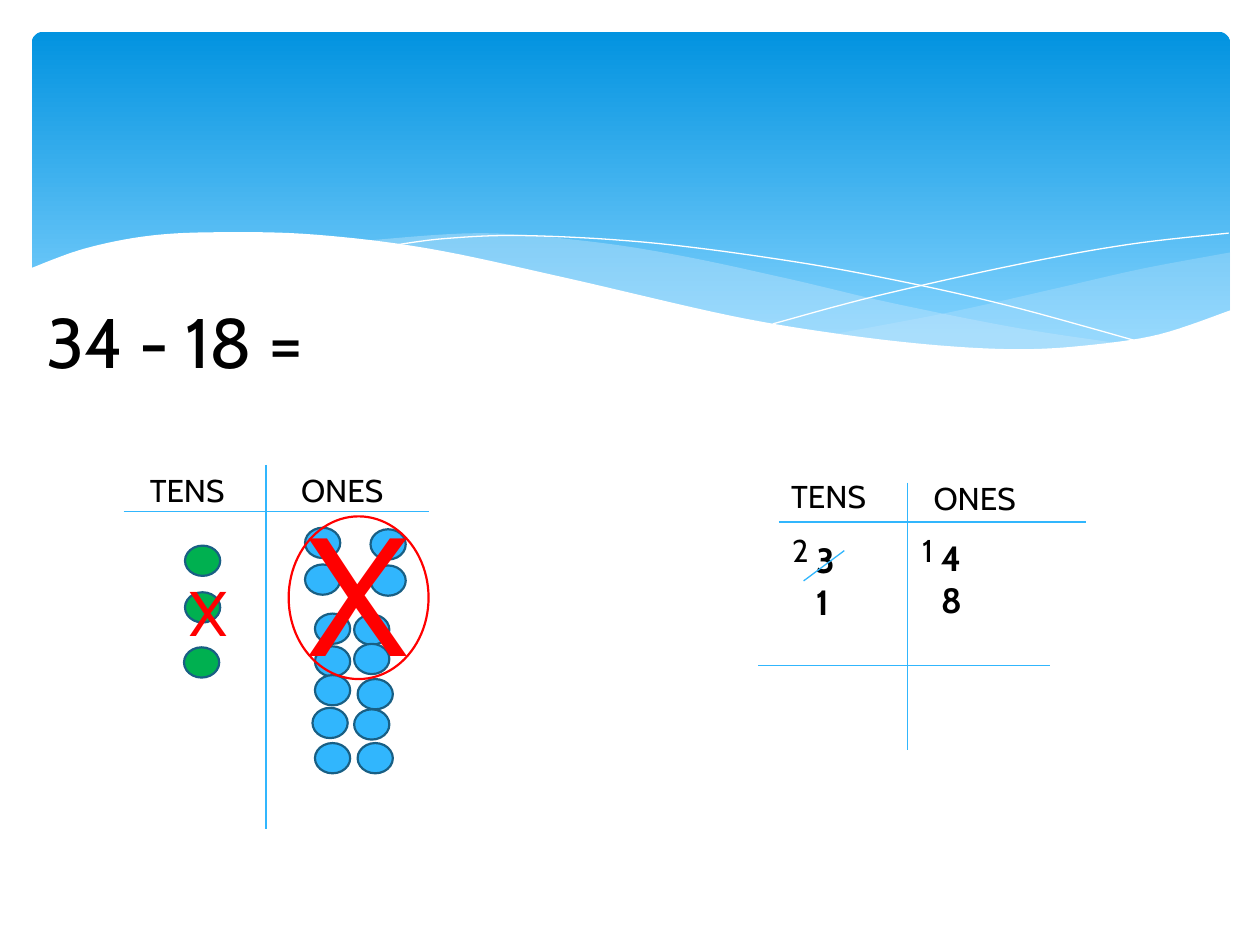
import lxml.etree
import pptx
import pptx.dml.color
import pptx.enum.shapes
import pptx.enum.text
import pptx.oxml.ns
import pptx.util

Cm = pptx.util.Cm
Pt = pptx.util.Pt
SHAPE = pptx.enum.shapes.MSO_SHAPE
COLORS = {
    "sky": "0293E0", "pale": "83D3FE", "mist": "C6E7FC", "white": "FFFFFF",
    "blue": "31B6FD", "navy": "195F84", "green": "00B050", "red": "FF0000", "black": "000000",
}
FONT = "Cabin"
COUNTER = (0.71, 0.61)

RIGHT_WAVE = (
    [(24.16, 4.45), (22.38, 4.78), (20.5, 5.21), (18.49, 5.66), (16.15, 6.1)],
    [(16.15, 6.1), (17.63, 6.27), (19.76, 6.43), (21.51, 6.32), (22.94, 6.05), (24.16, 5.64)],
)
MIDDLE_WAVE = (
    [(22.05, 6.3), (19.86, 5.97), (17.3, 5.46), (15.34, 5), (13.11, 4.52), (11.18, 4.22),
     (9.02, 4.06), (6.63, 4.22)],
    [(6.63, 4.22), (8.56, 4.52), (10.77, 5), (13.74, 5.66), (16.26, 6.12), (18.69, 6.4),
     (20.4, 6.43), (22.05, 6.3)],
)
FALLING_LINE = [(7.21, 4.32), (8.33, 4.17), (9.93, 4.11), (12.32, 4.24), (14.81, 4.55),
                (17.02, 4.93), (19.56, 5.49), (22.4, 6.27)]
RISING_LINE = [(14.94, 5.89), (17.02, 5.33), (19.84, 4.7), (22.1, 4.29), (24.13, 4.06)]
FRONT_WAVE = [(24.18, 5.61), (22.73, 6.1), (21.29, 6.32), (19.91, 6.4), (18.26, 6.32),
              (16.33, 6.1), (14.07, 5.72), (10.72, 4.95), (8, 4.37), (5.72, 4.09),
              (3.86, 4.04), (2.39, 4.11), (1.07, 4.37), (-0.05, 4.78)]

FOUR_ONES = [(3.66, 1.27), (3.66, 2.01), (4.98, 1.3), (4.98, 2.03)]
TEN_ONES = [(3.81, 4.9), (3.86, 3.66), (3.86, 4.24), (3.86, 3), (4.65, 3.02),
            (4.72, 4.32), (4.65, 3.61), (4.65, 4.93), (3.86, 5.61), (4.72, 5.61)]
THREE_TENS = [(1.24, 1.63), (1.24, 2.57), (1.22, 3.68)]


def color(name):
    """Return the named colour."""
    return pptx.dml.color.RGBColor.from_string(COLORS[name])


def spline(points, steps=8):
    """Return a smooth run of points through the given ones."""
    padded = [points[0], *points, points[-1]]
    curve = [points[0]]
    for a, b, c, d in zip(padded, padded[1:], padded[2:], padded[3:]):
        for step in range(1, steps + 1):
            t = step / steps
            curve.append(tuple(
                (2 * q + (r - p) * t + (2 * p - 5 * q + 4 * r - s) * t ** 2
                 + (3 * q - p - 3 * r + s) * t ** 3) / 2
                for p, q, r, s in zip(a, b, c, d)))
    return curve


def add_outline(slide, box, points, fill=None, opacity=100):
    """Draw a filled area, or a white hairline when there is no fill."""
    placed = [(Cm(box[0] + x), Cm(box[1] + y)) for x, y in points]
    builder = slide.shapes.build_freeform(*placed[0])
    builder.add_line_segments(placed[1:], close=fill is not None)
    shape = builder.convert_to_shape()
    shape.shadow.inherit = False
    if fill is None:
        shape.fill.background()
        shape.line.color.rgb = color("white")
        shape.line.width = Pt(0)
        return
    shape.line.fill.background()
    shape.fill.solid()
    shape.fill.fore_color.rgb = color(fill)
    if opacity < 100:
        value = next(shape.element.spPr.iter(pptx.oxml.ns.qn("a:srgbClr")))
        alpha = lxml.etree.SubElement(value, pptx.oxml.ns.qn("a:alpha"))
        alpha.set("val", str(opacity * 1000))


def add_oval(slide, box, place, size, kind, fill, line):
    """Draw an outlined oval at a place within the box."""
    shape = slide.shapes.add_shape(
        kind, Cm(box[0] + place[0]), Cm(box[1] + place[1]), Cm(size[0]), Cm(size[1]))
    shape.shadow.inherit = False
    if fill:
        shape.fill.solid()
        shape.fill.fore_color.rgb = color(fill)
    else:
        shape.fill.background()
    shape.line.color.rgb = color(line)
    shape.line.width = Pt(1.25)


def add_counters(slide, box, places, fill):
    """Draw one counter at each place."""
    for place in places:
        add_oval(slide, box, place, COUNTER, SHAPE.FLOWCHART_CONNECTOR, fill, "navy")


def add_text(slide, box, place, size, lines, points=18, ink="black", bold=False, wrap=True):
    """Write one paragraph for each line."""
    shape = slide.shapes.add_textbox(
        Cm(box[0] + place[0]), Cm(box[1] + place[1]), Cm(size[0]), Cm(size[1]))
    frame = shape.text_frame
    frame.word_wrap = wrap
    frame.auto_size = pptx.enum.text.MSO_AUTO_SIZE.SHAPE_TO_FIT_TEXT
    for index, line in enumerate(lines):
        paragraph = frame.add_paragraph() if index else frame.paragraphs[0]
        run = paragraph.add_run()
        run.text = line
        run.font.name = FONT
        run.font.size = Pt(points)
        run.font.bold = bold
        run.font.color.rgb = color(ink)


def add_rule(slide, box, start, end):
    """Draw a thin blue line."""
    connector = slide.shapes.add_connector(
        pptx.enum.shapes.MSO_CONNECTOR.STRAIGHT,
        Cm(box[0] + start[0]), Cm(box[1] + start[1]), Cm(box[0] + end[0]), Cm(box[1] + end[1]))
    connector.line.color.rgb = color("blue")
    connector.line.width = Pt(0.75)
    lxml.etree.SubElement(connector.element.spPr, pptx.oxml.ns.qn("a:effectLst"))


def add_banner(slide, box):
    """Draw the sky banner with its waves."""
    banner = slide.shapes.add_shape(SHAPE.ROUNDED_RECTANGLE, *(Cm(length) for length in box))
    banner.adjustments[0] = 0.034
    banner.shadow.inherit = False
    banner.line.fill.background()
    banner.fill.gradient()
    banner.fill.gradient_angle = 270
    for stop, position, name in zip(banner.fill.gradient_stops, (0, 0.9), ("sky", "pale")):
        stop.position = position
        stop.color.rgb = color(name)
    for (upper, lower), opacity in ((RIGHT_WAVE, 29), (MIDDLE_WAVE, 40)):
        add_outline(slide, box, spline(upper) + spline(lower), "mist", opacity)
    for points in (FALLING_LINE, RISING_LINE):
        add_outline(slide, box, spline(points))
    corners = [(-0.05, 7.72), (24.18, 7.72)]
    add_outline(slide, box, spline(FRONT_WAVE) + corners, "white")


def add_counter_chart(slide, box):
    """Draw the place value chart with counters."""
    width, height = box[2:]
    add_counters(slide, box, FOUR_ONES, "blue")
    add_counters(slide, box, THREE_TENS, "green")
    add_text(slide, box, (0.28, 0), (2.59, 1.02), ["TENS"])
    add_text(slide, box, (3.33, 0), (2.59, 1.02), ["ONES"])
    add_rule(slide, box, (2.87, 0), (2.87, height))
    add_rule(slide, box, (0, 0.94), (width, 0.94))
    add_counters(slide, box, TEN_ONES, "blue")
    add_oval(slide, box, (3.33, 1.04), (2.82, 3.28), SHAPE.OVAL, None, "red")
    add_text(slide, box, (3.45, 0.36), (1.4, 4.37), ["X"], 96, "red")
    add_text(slide, box, (1.09, 2.06), (0.97, 1.8), ["X"], 36, "red")


def add_written_sum(slide, box):
    """Draw the column subtraction with its regrouping marks."""
    width, height = box[2:]
    add_rule(slide, box, (0.41, 1.02), (width, 1.02))
    add_rule(slide, box, (3, 0.23), (3, height))
    add_text(slide, box, (0.41, 0), (2.59, 1.02), ["TENS"])
    add_text(slide, box, (3.28, 0.03), (2.59, 1.02), ["ONES"])
    add_text(slide, box, (0.91, 1.24), (1.6, 1.96), ["3", "1"], 20, bold=True)
    add_text(slide, box, (3.43, 1.19), (1.6, 1.96), ["4", "8"], 20, bold=True)
    add_rule(slide, box, (0, 3.91), (5.87, 3.91))
    add_text(slide, box, (3.05, 1.09), (0.74, 1.02), ["1"], wrap=False)
    add_rule(slide, box, (0.91, 2.21), (1.73, 1.6))
    add_text(slide, box, (0.43, 1.09), (0.81, 1.02), ["2"], wrap=False)


def main():
    """Build and save the slide."""
    presentation = pptx.Presentation()
    presentation.slide_width = Cm(25.4)
    presentation.slide_height = Cm(19.05)
    slide = presentation.slides.add_slide(presentation.slide_layouts[6])
    add_banner(slide, (0.64, 0.64, 24.16, 6.86))
    add_text(slide, (0.69, 5.89), (0, 0), (8.81, 1.96), ["34 - 18 ="], 40)
    add_counter_chart(slide, (2.49, 9.37, 6.15, 7.34))
    add_written_sum(slide, (15.29, 9.5, 6.6, 5.61))
    presentation.save("out.pptx")


if __name__ == "__main__":
    main()
